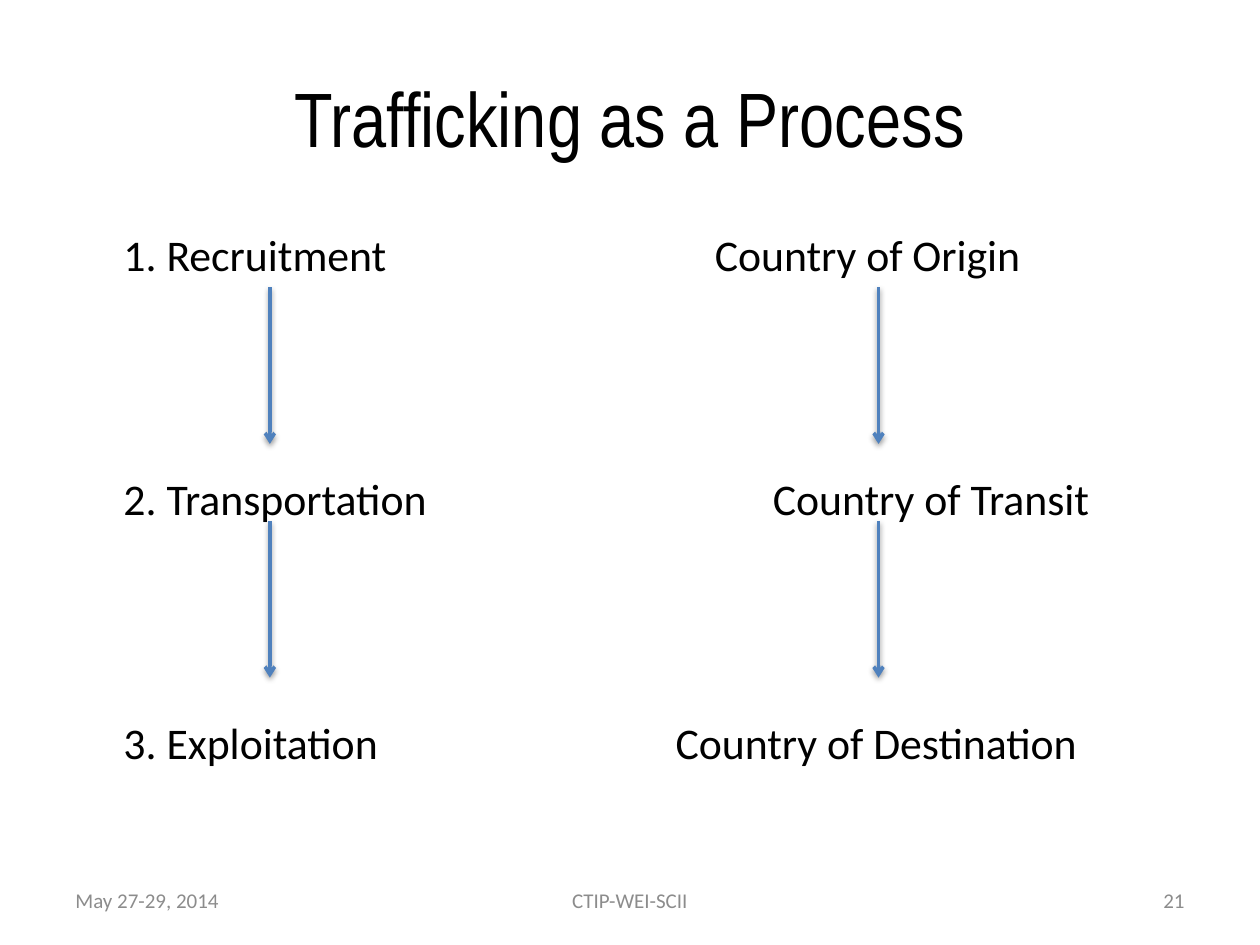
"""Build the slide that shows trafficking as a three-stage process."""
from typing import NamedTuple

import pptx
import pptx.dml.color
import pptx.enum.shapes
import pptx.enum.text
import pptx.oxml
import pptx.oxml.ns
import pptx.util
from pptx.util import Cm

BLACK = pptx.dml.color.RGBColor(0x00, 0x00, 0x00)
GREY = pptx.dml.color.RGBColor(0x8C, 0x8C, 0x8C)
BLUE = pptx.dml.color.RGBColor(0x4F, 0x81, 0xBD)
ALIGN = pptx.enum.text.PP_ALIGN
ANCHOR = pptx.enum.text.MSO_ANCHOR
NS = pptx.oxml.ns.nsdecls("a")
SHADOW = (
    f'<a:effectLst {NS}><a:outerShdw blurRad="40000" dist="20000" dir="5400000" '
    'rotWithShape="0"><a:srgbClr val="000000"><a:alpha val="38000"/></a:srgbClr>'
    "</a:outerShdw></a:effectLst>"
)


class Label(NamedTuple):
    text: str
    left: float
    top: float
    width: float
    height: float
    align: ALIGN
    size: int = 12
    font: str = "Calibri"
    color: pptx.dml.color.RGBColor = GREY


class Stage(NamedTuple):
    step: str
    country: str
    tab: float


LABELS = (
    Label("Trafficking as a Process", 1.27, 0.76, 22.86, 3.18, ALIGN.CENTER,
          44, "Arial Narrow", BLACK),
    Label("May 27-29, 2014", 1.27, 17.65, 5.93, 1.01, ALIGN.LEFT),
    Label("CTIP-WEI-SCII", 8.68, 17.65, 8.04, 1.01, ALIGN.CENTER),
    Label("21", 18.2, 17.65, 5.93, 1.01, ALIGN.RIGHT),
)
STAGES = (
    Stage("1. Recruitment", "Country of Origin", 11.92),
    Stage("2. Transportation", "Country of Transit", 13.09),
    Stage("3. Exploitation", "Country of Destination", 11.13),
)
STAGE_GAP = 109.5
ARROW_COLUMNS = (5.44, 17.71)
ARROW_TOPS = (5.79, 10.5)
ARROW_LENGTH = 3.16


def add_run(p, text: str, size: int, font: str, color) -> None:
    """Append one formatted run to a paragraph."""
    r = p.add_run()
    r.text = text
    r.font.size = pptx.util.Pt(size)
    r.font.name = font
    r.font.color.rgb = color


def add_label(s, label: Label) -> None:
    """Draw a single-line label centred vertically in its box."""
    sp = s.shapes.add_textbox(Cm(label.left), Cm(label.top), Cm(label.width), Cm(label.height))
    tf = sp.text_frame
    tf.word_wrap = True
    tf.vertical_anchor = ANCHOR.MIDDLE
    p = tf.paragraphs[0]
    p.alignment = label.align
    add_run(p, label.text, label.size, label.font, label.color)


def add_stages(s, stages: tuple[Stage, ...]) -> None:
    """Write the stages as evenly spaced paragraphs with a tabbed country."""
    sp = s.shapes.add_textbox(Cm(1.27), Cm(4.47), Cm(22.86), Cm(12.57))
    tf = sp.text_frame
    tf.word_wrap = True
    tf.margin_left = Cm(1.22)
    for i, stage in enumerate(stages):
        p = tf.add_paragraph() if i else tf.paragraphs[0]
        if i:
            p.space_before = pptx.util.Pt(STAGE_GAP)
        p._p.get_or_add_pPr().append(pptx.oxml.parse_xml(
            f'<a:tabLst {NS}><a:tab pos="{Cm(stage.tab)}" algn="l"/></a:tabLst>'))
        add_run(p, f"{stage.step}\t", 25, "Calibri", BLACK)
        add_run(p, stage.country, 25, "Calibri", BLACK)


def add_arrow(s, x: float, top: float) -> None:
    """Draw a downward arrow with a soft shadow."""
    sp = s.shapes.add_connector(
        pptx.enum.shapes.MSO_CONNECTOR.STRAIGHT, Cm(x), Cm(top), Cm(x), Cm(top + ARROW_LENGTH))
    sp.line.color.rgb = BLUE
    sp.line.width = pptx.util.Pt(2)
    sp.line._get_or_add_ln().append(pptx.oxml.parse_xml(f'<a:tailEnd {NS} type="arrow"/>'))
    sp._element.spPr.append(pptx.oxml.parse_xml(SHADOW))


def main() -> None:
    """Assemble and save the slide."""
    prs = pptx.Presentation()
    prs.slide_width, prs.slide_height = Cm(25.4), Cm(19.05)
    s = prs.slides.add_slide(prs.slide_layouts[6])
    for label in LABELS:
        add_label(s, label)
    add_stages(s, STAGES)
    for x in ARROW_COLUMNS:
        for top in ARROW_TOPS:
            add_arrow(s, x, top)
    prs.save("out.pptx")


if __name__ == "__main__":
    main()
